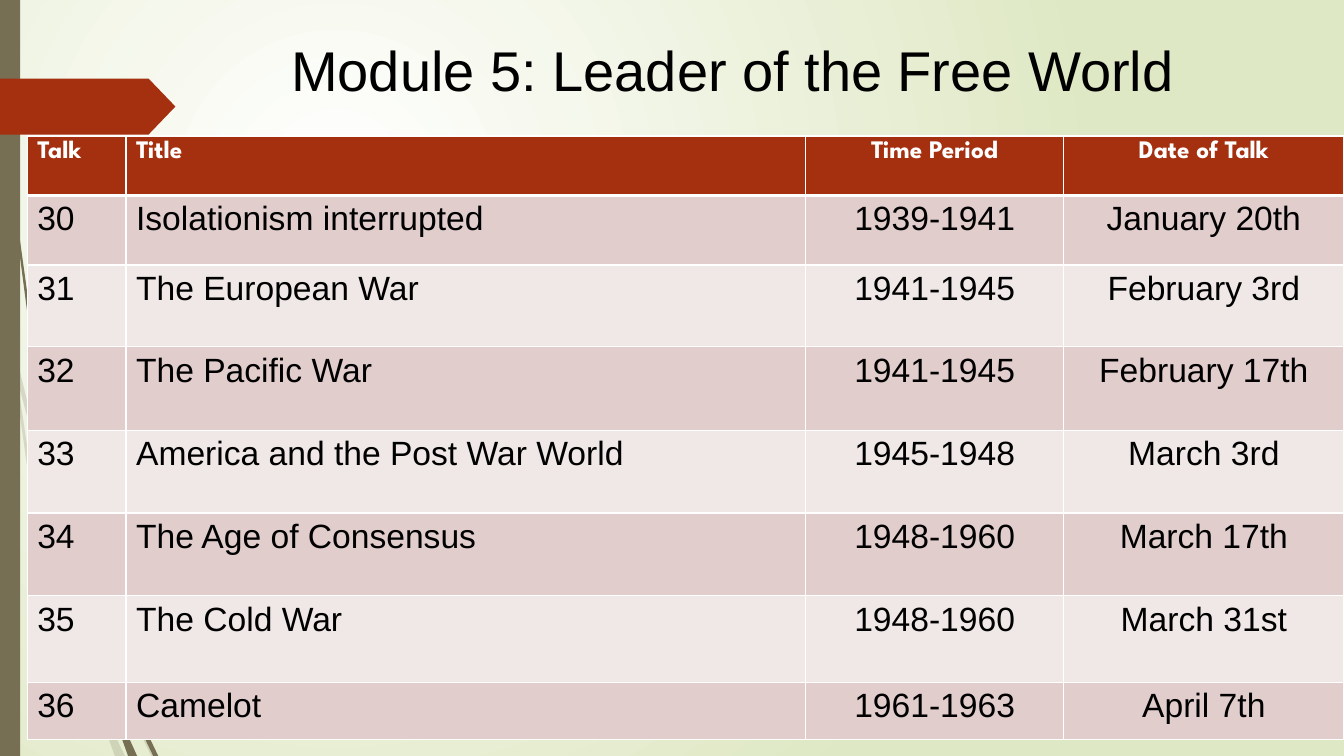
from lxml.etree import SubElement
from pptx import Presentation
from pptx.dml.color import RGBColor
from pptx.enum.shapes import MSO_SHAPE as SHAPE
from pptx.enum.text import PP_ALIGN as ALIGN
from pptx.oxml.ns import qn
from pptx.util import Inches, Pt

OLIVE, RUST, WHITE, BLACK = "766F54", "A53010", "FFFFFF", "000000"
BANDS = ["E1CDCC", "F0E8E7"]
COLS = [0.98, 6.74, 2.56, 2.78]
ROWS = [0.59, 0.69, 0.81, 0.83, 0.82, 0.82, 0.86, 0.57]
TALKS = [
    ("Talk", "Title", "Time Period", "Date of Talk"),
    ("30", "Isolationism interrupted", "1939-1941", "January 20th"),
    ("31", "The European War", "1941-1945", "February 3rd"),
    ("32", "The Pacific War", "1941-1945", "February 17th"),
    ("33", "America and the Post War World", "1945-1948", "March 3rd"),
    ("34", "The Age of Consensus", "1948-1960", "March 17th"),
    ("35", "The Cold War", "1948-1960", "March 31st"),
    ("36", "Camelot", "1961-1963", "April 7th"),
]
PALE_BLADES = [
    [(0.14, 3.45), (0.36, 4.35), (0.62, 5.2), (0.85, 5.86), (0.84, 5.99),
     (0.58, 5.22), (0.36, 4.48), (0.17, 3.76)],
    [(0.11, 3.5), (0.17, 3.76), (0.31, 4.69), (0.48, 5.45), (0.7, 6.19), (0.93, 6.83),
     (1.01, 7.14), (0.92, 6.93), (0.65, 6.21), (0.44, 5.45), (0.28, 4.7)],
    [(0.88, 5.96), (1.27, 6.92), (1.55, 7.5), (1.5, 7.5), (1.23, 6.94), (0.88, 6.1)],
    [(1.01, 7.14), (1.05, 7.11), (1.24, 7.5), (1.14, 7.5)],
]
DARK_BLADES = [
    [(0.03, 0), (0.04, 0), (0.08, 1.09), (0.19, 2.32), (0.36, 3.55), (0.55, 4.53),
     (0.57, 4.81), (0.33, 3.55), (0.17, 2.33), (0.07, 1.1)],
    [(1.1, 6.41), (1.36, 7.06), (1.57, 7.5), (1.52, 7.5), (1.32, 7.08), (1.11, 6.56)],
    [(1.17, 7.22), (1.22, 7.19), (1.36, 7.5), (1.27, 7.5)],
]


def rgb(color):
    return RGBColor.from_string(color)


def paint(sp, color, alpha=100):
    sp.shadow.inherit = False
    sp.fill.solid()
    sp.fill.fore_color.rgb = rgb(color)
    sp.line.fill.background()
    if alpha < 100:
        clr = sp.fill._xPr.find(f"{qn('a:solidFill')}/{qn('a:srgbClr')}")
        SubElement(clr, qn("a:alpha"), val=str(alpha * 1000))


def style(p, font, size, color, bold=False, align=ALIGN.LEFT):
    p.alignment = align
    for r in p.runs:
        r.font.name, r.font.size, r.font.bold = font, Pt(size), bold
        r.font.color.rgb = rgb(color)


def add_background(s):
    fill = s.background.fill
    fill.gradient()
    for stop, color in zip(fill.gradient_stops, (WHITE, "DFE8C4")):
        stop.color.rgb = rgb(color)
    grad = s.element.find(f".//{qn('a:gradFill')}")
    grad.remove(grad.find(qn("a:lin")))
    circle = SubElement(grad, qn("a:path"), {"path": "circle"})
    SubElement(circle, qn("a:fillToRect"), l="50000", t="50000", r="100000", b="100000")


def add_blades(s, x, y, blades, alpha):
    for points in blades:
        (x0, y0), *rest = [(round(a * 100), round(b * 100)) for a, b in points]
        outline = s.shapes.build_freeform(x0, y0, scale=Inches(0.01))
        outline.add_line_segments(rest)
        paint(outline.convert_to_shape(Inches(x), Inches(y)), OLIVE, alpha)


def add_left_edge(s, x, y, w, h):
    add_blades(s, x, y, PALE_BLADES, 20)
    add_blades(s, x, y, DARK_BLADES, 100)
    bar = s.shapes.add_shape(SHAPE.RECTANGLE, Inches(x), Inches(y),
                             Inches(0.115 * w), Inches(h))
    paint(bar, OLIVE)
    arrow = s.shapes.add_shape(SHAPE.PENTAGON, Inches(x), Inches(y + 0.104 * h),
                               Inches(w), Inches(0.074 * h))
    arrow.adjustments[0] = 0.48
    paint(arrow, RUST)


def add_title(s, x, y, w, h):
    tf = s.shapes.add_textbox(Inches(x), Inches(y), Inches(w), Inches(h)).text_frame
    tf.word_wrap = False
    tf.text = "Module 5: Leader of the Free World"
    style(tf.paragraphs[0], "Arial", 40, BLACK)


def add_borders(cell, row):
    tc_pr = cell._tc.get_or_add_tcPr()
    for side in "LRTB":
        thick = (row, side) in ((0, "B"), (1, "T"))
        ln = SubElement(tc_pr, qn(f"a:ln{side}"), w=str(Pt(3 if thick else 1)))
        SubElement(SubElement(ln, qn("a:solidFill")), qn("a:srgbClr"), val=WHITE)


def add_talks(s, x, y, w, h):
    table = s.shapes.add_table(len(ROWS), len(COLS), Inches(x), Inches(y),
                               Inches(w), Inches(h)).table
    for column, width in zip(table.columns, COLS):
        column.width = Inches(w * width / sum(COLS))
    for row, height in zip(table.rows, ROWS):
        row.height = Inches(h * height / sum(ROWS))
    for i, talk in enumerate(TALKS):
        for j, text in enumerate(talk):
            cell = table.cell(i, j)
            add_borders(cell, i)
            cell.fill.solid()
            cell.fill.fore_color.rgb = rgb(BANDS[(i - 1) % 2] if i else RUST)
            cell.text_frame.text = text
            look = ("Arial", 24, BLACK, False) if i else ("League Spartan", 18, WHITE, True)
            style(cell.text_frame.paragraphs[0], *look,
                  align=ALIGN.CENTER if j > 1 else ALIGN.LEFT)


def main():
    prs = Presentation()
    prs.slide_width, prs.slide_height = Inches(13.33), Inches(7.5)
    s = prs.slides.add_slide(prs.slide_layouts[6])
    add_background(s)
    add_left_edge(s, 0, 0, 1.74, 7.5)
    add_title(s, 2.79, 0.3, 9.05, 0.77)
    add_talks(s, 0.27, 1.35, 13.06, 5.99)
    prs.save("out.pptx")


if __name__ == "__main__":
    main()
